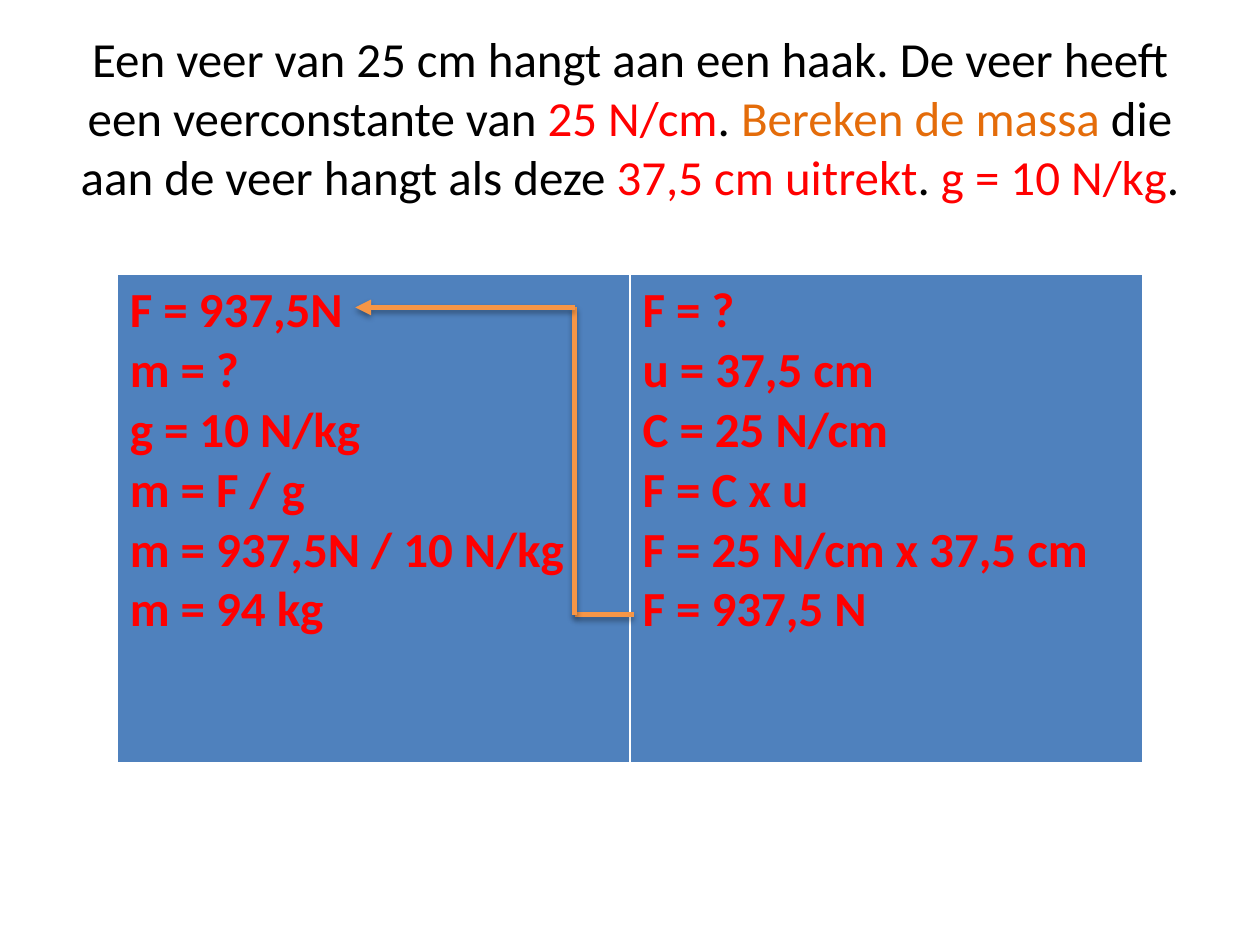
from dataclasses import dataclass

import lxml.etree
import pptx
import pptx.dml.color
import pptx.enum.shapes
import pptx.enum.text
import pptx.oxml
import pptx.oxml.ns
import pptx.util
from pptx.util import Inches


@dataclass(frozen=True)
class Theme:
    font: str = "Calibri"
    size: int = 28
    text: str = "000000"
    given: str = "FF0000"
    asked: str = "E46C0A"
    cell: str = "4F81BD"
    arrow: str = "F79646"
    arrow_width: int = 3


THEME = Theme()

QUESTION = [
    ("Een veer van 25 cm hangt aan een haak. De veer heeft een veerconstante van ", THEME.text),
    ("25 N/cm", THEME.given),
    (". ", THEME.text),
    ("Bereken de massa ", THEME.asked),
    ("die aan de veer hangt als deze ", THEME.text),
    ("37,5 cm uitrekt", THEME.given),
    (". ", THEME.text),
    ("g = 10 N/kg", THEME.given),
    (".", THEME.text),
]

SOLUTIONS = [
    ["F = 937,5N", "m = ?", "g = 10 N/kg", "m = F / g",
     "m = 937,5N / 10 N/kg", "m = 94 kg"],
    ["F = ?", "u = 37,5 cm", "C = 25 N/cm", "F = C x u",
     "F = 25 N/cm x 37,5 cm", "F = 937,5 N"],
]

# Corners of the arrow that carries the force to the first column
ARROW_POINTS = [(5.03, 4.88), (4.56, 4.88), (4.56, 2.44), (2.82, 2.44)]


def rgb(value):
    return pptx.dml.color.RGBColor.from_string(value)


def add_run(paragraph, text, color, bold=False):
    run = paragraph.add_run()
    run.text = text
    run.font.name = THEME.font
    run.font.size = pptx.util.Pt(THEME.size)
    run.font.bold = bold
    run.font.color.rgb = rgb(color)


def add_question(slide, left, top, width, height):
    shape = slide.shapes.add_textbox(Inches(left), Inches(top), Inches(width), Inches(height))
    frame = shape.text_frame
    frame.word_wrap = True
    frame.vertical_anchor = pptx.enum.text.MSO_ANCHOR.MIDDLE
    paragraph = frame.paragraphs[0]
    paragraph.alignment = pptx.enum.text.PP_ALIGN.CENTER
    for text, color in QUESTION:
        add_run(paragraph, text, color)


def add_solutions(slide, left, top, width, height):
    table = slide.shapes.add_table(
        1, len(SOLUTIONS), Inches(left), Inches(top), Inches(width), Inches(height)
    ).table
    for cell, lines in zip(table.rows[0].cells, SOLUTIONS):
        cell.fill.solid()
        cell.fill.fore_color.rgb = rgb(THEME.cell)
        frame = cell.text_frame
        for index, line in enumerate(lines):
            paragraph = frame.add_paragraph() if index else frame.paragraphs[0]
            add_run(paragraph, line, THEME.given, bold=True)


def add_shadow(connector):
    effects = pptx.oxml.parse_xml(
        f'<a:effectLst {pptx.oxml.ns.nsdecls("a")}>'
        '<a:outerShdw blurRad="40000" dist="23000" dir="5400000" rotWithShape="0">'
        '<a:srgbClr val="000000"><a:alpha val="35000"/></a:srgbClr>'
        '</a:outerShdw></a:effectLst>'
    )
    connector._element.spPr.append(effects)


def add_arrow(slide, points):
    for start, end in zip(points, points[1:]):
        connector = slide.shapes.add_connector(
            pptx.enum.shapes.MSO_CONNECTOR.STRAIGHT,
            *(Inches(value) for value in start + end),
        )
        connector.line.color.rgb = rgb(THEME.arrow)
        connector.line.width = pptx.util.Pt(THEME.arrow_width)
        add_shadow(connector)
    # Arrowhead on the last segment
    lxml.etree.SubElement(
        connector.line._get_or_add_ln(), pptx.oxml.ns.qn("a:tailEnd"), type="triangle"
    )


def main():
    presentation = pptx.Presentation()
    presentation.slide_width = Inches(10)
    presentation.slide_height = Inches(7.5)
    slide = presentation.slides.add_slide(presentation.slide_layouts[6])
    add_question(slide, 0.5, 0.3, 9, 1.25)
    add_solutions(slide, 0.93, 2.18, 8.14, 3.87)
    add_arrow(slide, ARROW_POINTS)
    presentation.save("out.pptx")


if __name__ == "__main__":
    main()
